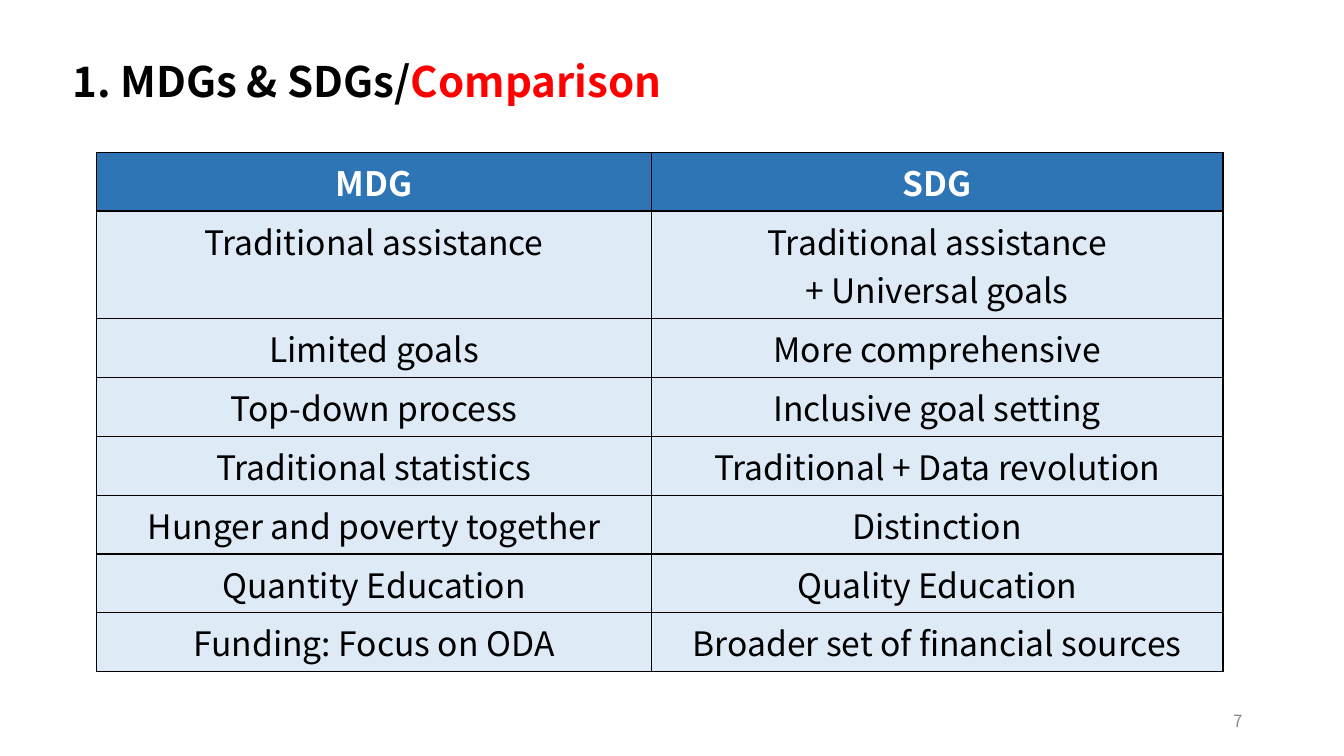
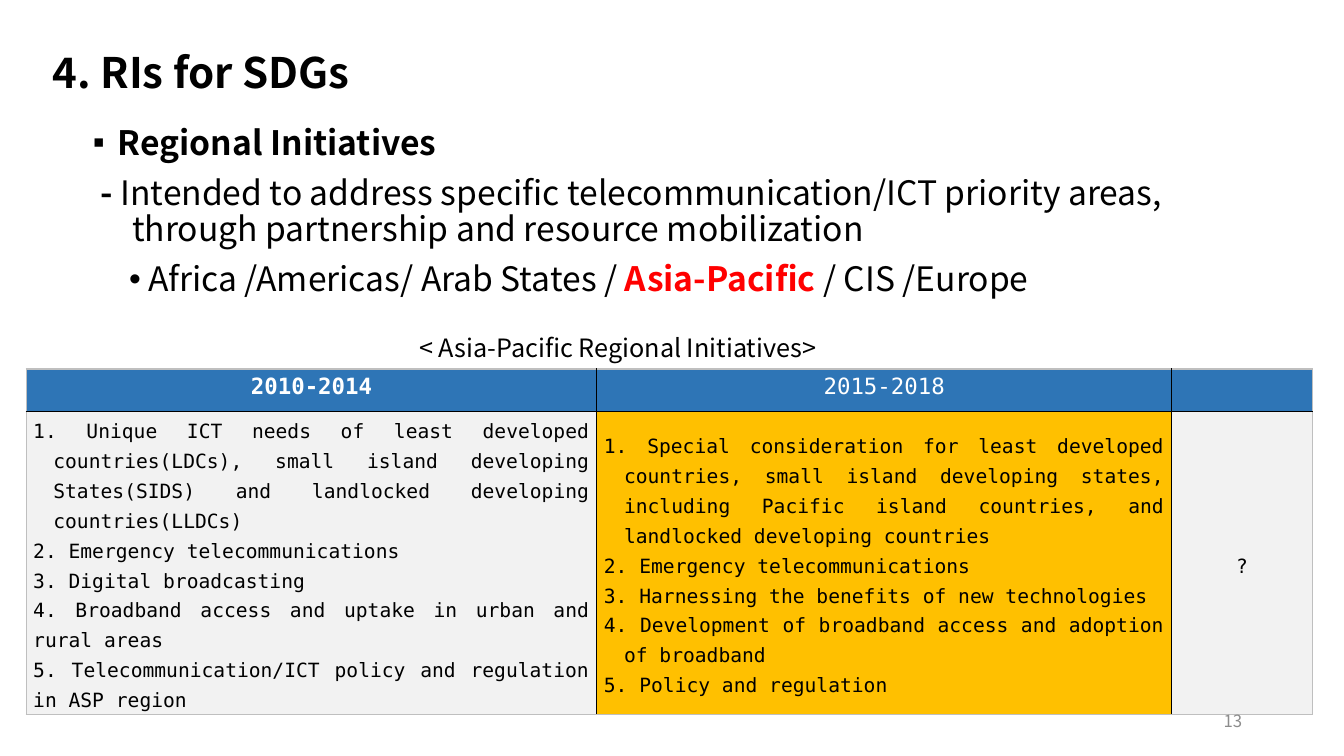
from lxml import etree
from pptx import Presentation
from pptx.dml.color import RGBColor
from pptx.enum import text as t
from pptx.oxml.ns import qn
from pptx.util import Inches, Pt

BLACK = RGBColor(0, 0, 0)
WHITE = RGBColor(255, 255, 255)
RED = RGBColor(255, 0, 0)
BLUE = RGBColor(0x2E, 0x75, 0xB6)
PALE = RGBColor(0xDE, 0xEB, 0xF7)
LIGHT = RGBColor(0xF2, 0xF2, 0xF2)
GOLD = RGBColor(0xFF, 0xC0, 0x00)
GREY = RGBColor(0x8C, 0x8C, 0x8C)
EDGE = RGBColor(0xBF, 0xBF, 0xBF)
SANS = "Noto Sans CJK KR"
MONO = "DejaVu Sans Mono"
LEFT, MID, RIGHT, JUST = (t.PP_ALIGN.LEFT, t.PP_ALIGN.CENTER,
                          t.PP_ALIGN.RIGHT, t.PP_ALIGN.JUSTIFY)

GOALS = [
    ("MDG", "SDG"),
    ("Traditional assistance", ["Traditional assistance", "+ Universal goals"]),
    ("Limited goals", "More comprehensive"),
    ("Top-down process", "Inclusive goal setting"),
    ("Traditional statistics", "Traditional + Data revolution"),
    ("Hunger and poverty together", "Distinction"),
    ("Quantity Education", "Quality Education"),
    ("Funding: Focus on ODA", "Broader set of financial sources"),
]
HANG = (0.2, -0.2)
OLD = [
    ("1. Unique ICT needs of least developed countries(LDCs), small island "
     "developing States(SIDS) and landlocked developing countries(LLDCs)", HANG),
    ("2. Emergency telecommunications", None),
    ("3. Digital broadcasting", None),
    ("4. Broadband access and uptake in urban and rural areas", None),
    ("5. Telecommunication/ICT policy and regulation in ASP region", None),
]
NEW = [
    ("1. Special consideration for least developed countries, small island "
     "developing states, including Pacific island countries, and landlocked "
     "developing countries", HANG),
    ("2. Emergency telecommunications", None),
    ("3. Harnessing the benefits of new technologies", None),
    ("4. Development of broadband access and adoption of broadband", HANG),
    ("5. Policy and regulation", None),
]


def write(par, *runs, size=24, font=SANS, color=BLACK, bold=False, align=LEFT,
          lines=None, before=None, indent=None, bullet=None):
    """Fill a paragraph; a run is a string or (string, overrides)."""
    props = par._p.get_or_add_pPr()
    if indent:
        props.set("marL", str(Inches(indent[0])))
        props.set("indent", str(Inches(indent[1])))
    if bullet:
        etree.SubElement(props, qn("a:buChar")).set("char", bullet)
    elif bullet == "":
        etree.SubElement(props, qn("a:buNone"))
    par.alignment = align
    if lines:
        par.line_spacing = lines
    if before is not None:
        par.space_before = Pt(before)
    for item in runs:
        words, own = (item, {}) if isinstance(item, str) else item
        run = par.add_run()
        run.text = words
        run.font.name = font
        run.font.size = Pt(size)
        run.font.bold = own.get("bold", bold)
        run.font.color.rgb = own.get("color", color)


def lines_of(frame, count):
    """Return the first paragraph and as many new ones as needed."""
    return [frame.paragraphs[0]] + [frame.add_paragraph()
                                    for _ in range(count - 1)]


def place(shape, left, top, width, height):
    shape.left, shape.top = Inches(left), Inches(top)
    shape.width, shape.height = Inches(width), Inches(height)


def title(slide, left, top, *runs):
    shape = slide.shapes.title
    place(shape, left, top, 11.5, 0.86)
    frame = shape.text_frame
    frame.auto_size = t.MSO_AUTO_SIZE.NONE
    frame.vertical_anchor = t.MSO_ANCHOR.MIDDLE
    write(frame.paragraphs[0], *runs, size=30, bold=True, lines=0.9)


def label(slide, box, words, anchor=t.MSO_ANCHOR.TOP, **style):
    shape = slide.shapes.add_textbox(*map(Inches, box))
    shape.text_frame.word_wrap = True
    shape.text_frame.vertical_anchor = anchor
    write(shape.text_frame.paragraphs[0], words, **style)


def number(slide, num):
    label(slide, (9.42, 6.95, 3, 0.4), num, t.MSO_ANCHOR.MIDDLE,
          size=12, color=GREY, align=RIGHT)


def border(cell, sides):
    """Draw one-point cell borders; sides maps tag to colour."""
    props = cell._tc.get_or_add_tcPr()
    for spot, (tag, color) in enumerate(sides.items()):
        line = etree.Element(qn("a:" + tag), w=str(Pt(1)))
        fill = etree.SubElement(line, qn("a:solidFill"))
        etree.SubElement(fill, qn("a:srgbClr")).set("val", str(color))
        props.insert(spot, line)


def grid(slide, left, top, cols, rows, fill, edge=BLACK):
    """Add a bordered table; fill(row, col) gives each cell's colour."""
    box = map(Inches, (left, top, sum(cols), sum(rows)))
    table = slide.shapes.add_table(len(rows), len(cols), *box).table
    table.first_row = table.horz_banding = False
    for col, width in zip(table.columns, cols):
        col.width = Inches(width)
    for row, height in zip(table.rows, rows):
        row.height = Inches(height)
    for r in range(len(rows)):
        for c in range(len(cols)):
            cell = table.cell(r, c)
            cell.fill.solid()
            cell.fill.fore_color.rgb = fill(r, c)
            outer = {"lnL": c == 0, "lnR": c == len(cols) - 1,
                     "lnT": r == 0, "lnB": r == len(rows) - 1}
            border(cell, {tag: edge if out else BLACK
                          for tag, out in outer.items()})
    return table


def goals(slide, left, top):
    table = grid(slide, left, top, [5.5, 5.67], [0.46] * len(GOALS),
                 lambda r, c: PALE if r else BLUE)
    for r, row in enumerate(GOALS):
        for c, words in enumerate(row):
            words = [words] if isinstance(words, str) else words
            frame = table.cell(r, c).text_frame
            for par, line in zip(lines_of(frame, len(words)), words):
                write(par, line, align=MID, bold=r == 0,
                      color=BLACK if r else WHITE)


def plans(slide, left, top):
    tints = [LIGHT, GOLD, LIGHT]
    table = grid(slide, left, top, [5.66, 5.7, 1.4], [0.42, 2.82],
                 lambda r, c: tints[c] if r else BLUE, EDGE)
    for c, years in enumerate(["2010-2014", "2015-2018"]):
        write(table.cell(0, c).text_frame.paragraphs[0], years, size=16,
              font=MONO, color=WHITE, bold=c == 0, align=MID)
    for c, items in enumerate([OLD, NEW, [("?", None)]]):
        cell = table.cell(1, c)
        cell.vertical_anchor = t.MSO_ANCHOR.MIDDLE
        cell.margin_left = cell.margin_right = Inches(0.07)
        cell.margin_top = cell.margin_bottom = Inches(0.02)
        pars = lines_of(cell.text_frame, len(items))
        for par, (words, indent) in zip(pars, items):
            write(par, words, size=14, font=MONO, lines=1.3, indent=indent,
                  align=JUST if c < 2 else MID)


def points(slide, *box):
    shape = slide.placeholders[1]
    place(shape, *box)
    frame = shape.text_frame
    frame.auto_size = t.MSO_AUTO_SIZE.NONE
    head, aim, areas = lines_of(frame, 3)
    write(head, "Regional Initiatives", bold=True, lines=0.9, before=0,
          indent=(0.25, -0.25), bullet="▪")
    write(aim, (" - ", {"bold": True}),
          "Intended to address specific telecommunication/ICT priority areas, "
          "through partnership and resource mobilization",
          lines=0.9, before=10, indent=(0.39, -0.39), bullet="")
    write(areas, " Africa /Americas/ Arab States / ",
          ("Asia-Pacific ", {"color": RED, "bold": True}), "/ CIS /Europe",
          lines=0.9, before=10, indent=(0.25, 0.11), bullet="•")


def compare(deck):
    slide = deck.slides.add_slide(deck.slide_layouts[5])
    title(slide, 0.62, 0.4, "1. MDGs & SDGs/", ("Comparison", {"color": RED}))
    goals(slide, 0.96, 1.51)
    number(slide, "7")


def regions(deck):
    slide = deck.slides.add_slide(deck.slide_layouts[1])
    title(slide, 0.42, 0.31, "4. RIs for SDGs")
    points(slide, 0.82, 1.2, 11.09, 2.1)
    plans(slide, 0.26, 3.66)
    label(slide, (4.06, 3.25, 5.69, 0.4),
          "< Asia-Pacific Regional Initiatives>", size=18)
    number(slide, "13")


def main():
    deck = Presentation()
    deck.slide_width, deck.slide_height = Inches(13.33), Inches(7.5)
    compare(deck)
    regions(deck)
    deck.save("out.pptx")


if __name__ == "__main__":
    main()
